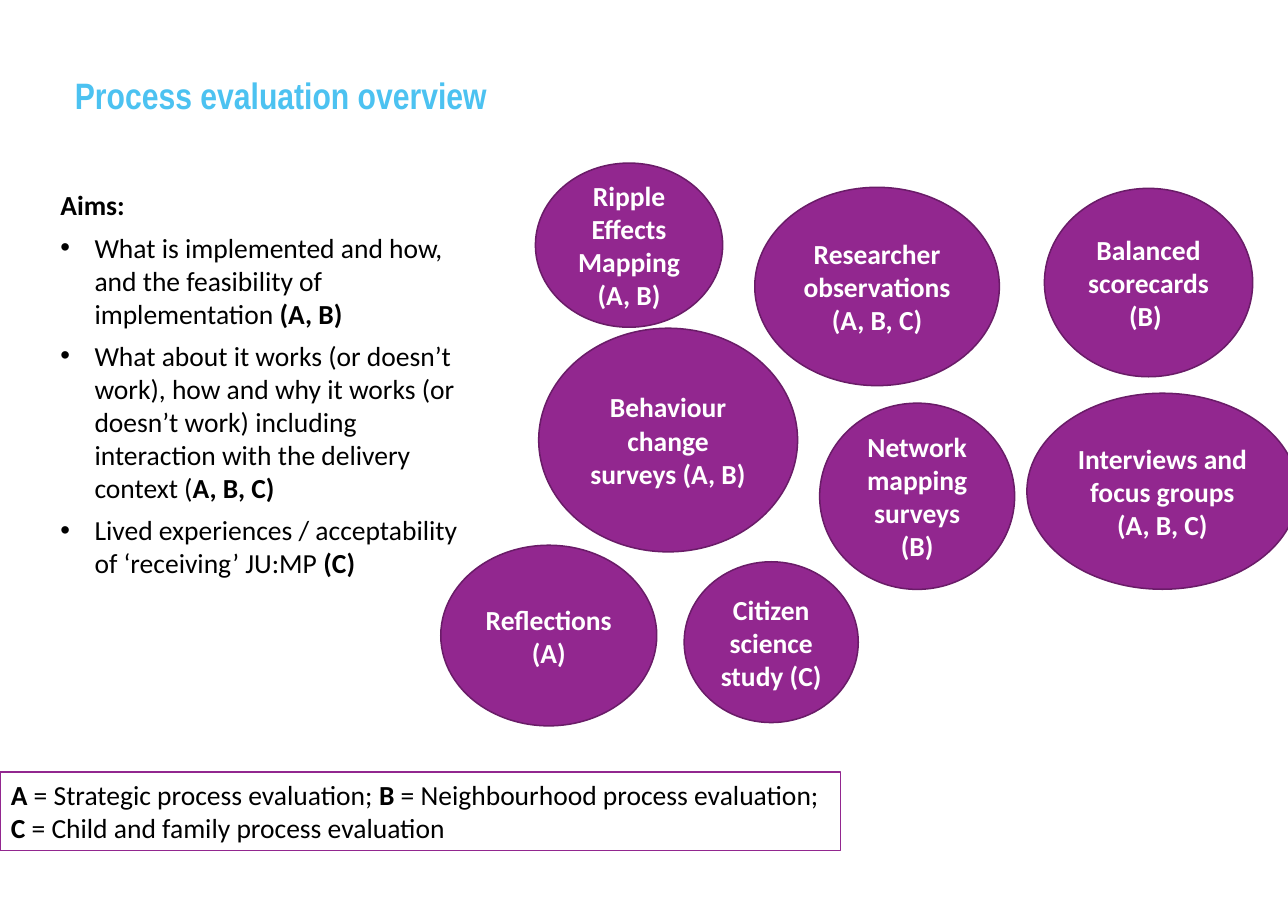
from lxml.etree import SubElement
from pptx import Presentation
from pptx.dml.color import RGBColor
from pptx.enum.shapes import MSO_SHAPE
from pptx.enum.text import MSO_ANCHOR, MSO_AUTO_SIZE, PP_ALIGN
from pptx.oxml.ns import qn
from pptx.util import Inches, Pt

WIDTH, HEIGHT = Inches(11.69), Inches(8.27)
COLOURS = {"title": "4CC2F1", "text": "000000", "paper": "FFFFFF",
           "purple": "92278F", "edge": "6A1C68"}
BODY = {"name": "Calibri", "size": Pt(18)}
HEADING = {"name": "Arial Narrow", "size": Pt(24), "bold": True}
INDENT = Inches(0.31)

# Places are left, top, width and height in percent of the slide.
TITLE_PLACE = (4.96, 7.98, 69.46, 4.84)
AIMS_PLACE = (3.85, 20.07, 33.88, 55.5)
KEY_PLACE = (0, 84.76, 65.27, 8.59)
METHODS = [
    ("Ripple Effects Mapping (A, B)", (41.57, 17.9, 14.54, 18.02)),
    ("Researcher observations (A, B, C)", (58.6, 20.56, 18.99, 21.77)),
    ("Interviews and focus groups (A, B, C)", (79.73, 43.17, 21.04, 21.52)),
    ("Balanced scorecards (B) ", (81.09, 20.68, 16.17, 20.68)),
    ("Citizen science study (C)", (53.12, 61.67, 13.52, 17.65)),
    ("Reflections (A)", (34.22, 59.85, 16.77, 19.83)),
    ("Behaviour change surveys (A, B)", (41.83, 36.03, 20.1, 24.55)),
    ("Network mapping surveys (B)", (63.64, 44.26, 15.14, 20.44)),
]
AIMS = [
    ("What is implemented and how, and the feasibility of implementation ", "(A, B)"),
    ("What about it works (or doesn’t work), how and why it works (or doesn’t work) "
     "including interaction with the delivery context (", "A, B, C)"),
    ("Lived experiences / acceptability of ‘receiving’ JU:MP ", "(C)"),
]
KEY = [
    [("A", True), (" = Strategic process evaluation; ", False),
     ("B", True), (" = Neighbourhood process evaluation;", False)],
    [("C", True), (" = Child and family process evaluation", False)],
]


def colour(name):
    return RGBColor.from_string(COLOURS[name])


def set_all(target, values):
    for name, value in values.items():
        setattr(target, name, value)


def box(place):
    """Turn percentages of the slide into left, top, width and height."""
    return [round(share * full / 100)
            for share, full in zip(place, (WIDTH, HEIGHT) * 2)]


def add_run(paragraph, text, bold, ink="text"):
    run = paragraph.add_run()
    run.text = text
    set_all(run.font, {**BODY, "bold": bold})
    run.font.color.rgb = colour(ink)


def add_bullet(paragraph):
    properties = paragraph._p.get_or_add_pPr()
    properties.set("marL", str(INDENT))
    properties.set("indent", str(-INDENT))
    SubElement(properties, qn("a:buFont")).set("typeface", "Arial")
    SubElement(properties, qn("a:buChar")).set("char", "•")


def add_panel(slide, preset, place, fill, edge, anchor):
    panel = slide.shapes.add_shape(preset, *box(place))
    panel.shadow.inherit = False
    panel.fill.solid()
    panel.fill.fore_color.rgb = colour(fill)
    panel.line.color.rgb = colour(edge)
    panel.line.width = Pt(1)
    set_all(panel.text_frame, {"word_wrap": True, "vertical_anchor": anchor})
    return panel.text_frame


def add_title(slide, text):
    title = slide.shapes.title
    set_all(title, dict(zip(("left", "top", "width", "height"), box(TITLE_PLACE))))
    set_all(title.text_frame, {"text": text, "vertical_anchor": MSO_ANCHOR.TOP,
                               "auto_size": MSO_AUTO_SIZE.NONE})
    heading = title.text_frame.paragraphs[0]
    set_all(heading, {"alignment": PP_ALIGN.LEFT, "line_spacing": 0.9})
    font = heading.runs[0].font
    set_all(font, HEADING)
    font.color.rgb = colour("title")


def add_aims(slide):
    frame = slide.shapes.add_textbox(*box(AIMS_PLACE)).text_frame
    frame.word_wrap = True
    add_run(frame.paragraphs[0], "Aims:", True)
    for aim, strands in AIMS:
        paragraph = frame.add_paragraph()
        add_bullet(paragraph)
        paragraph.space_before = Pt(6)
        add_run(paragraph, aim, False)
        add_run(paragraph, strands, True)


def add_key(slide):
    frame = add_panel(slide, MSO_SHAPE.RECTANGLE, KEY_PLACE,
                      "paper", "purple", MSO_ANCHOR.TOP)
    frame.add_paragraph()
    for paragraph, parts in zip(frame.paragraphs, KEY):
        paragraph.alignment = PP_ALIGN.LEFT
        for text, bold in parts:
            add_run(paragraph, text, bold)


def add_method(slide, label, place):
    frame = add_panel(slide, MSO_SHAPE.OVAL, place,
                      "purple", "edge", MSO_ANCHOR.MIDDLE)
    paragraph = frame.paragraphs[0]
    paragraph.alignment = PP_ALIGN.CENTER
    add_run(paragraph, label, True, "paper")


def main():
    deck = Presentation()
    set_all(deck, {"slide_width": WIDTH, "slide_height": HEIGHT})
    slide = deck.slides.add_slide(deck.slide_layouts[5])
    add_title(slide, "Process evaluation overview")
    add_aims(slide)
    add_key(slide)
    for label, place in METHODS:
        add_method(slide, label, place)
    deck.save("out.pptx")


if __name__ == "__main__":
    main()
